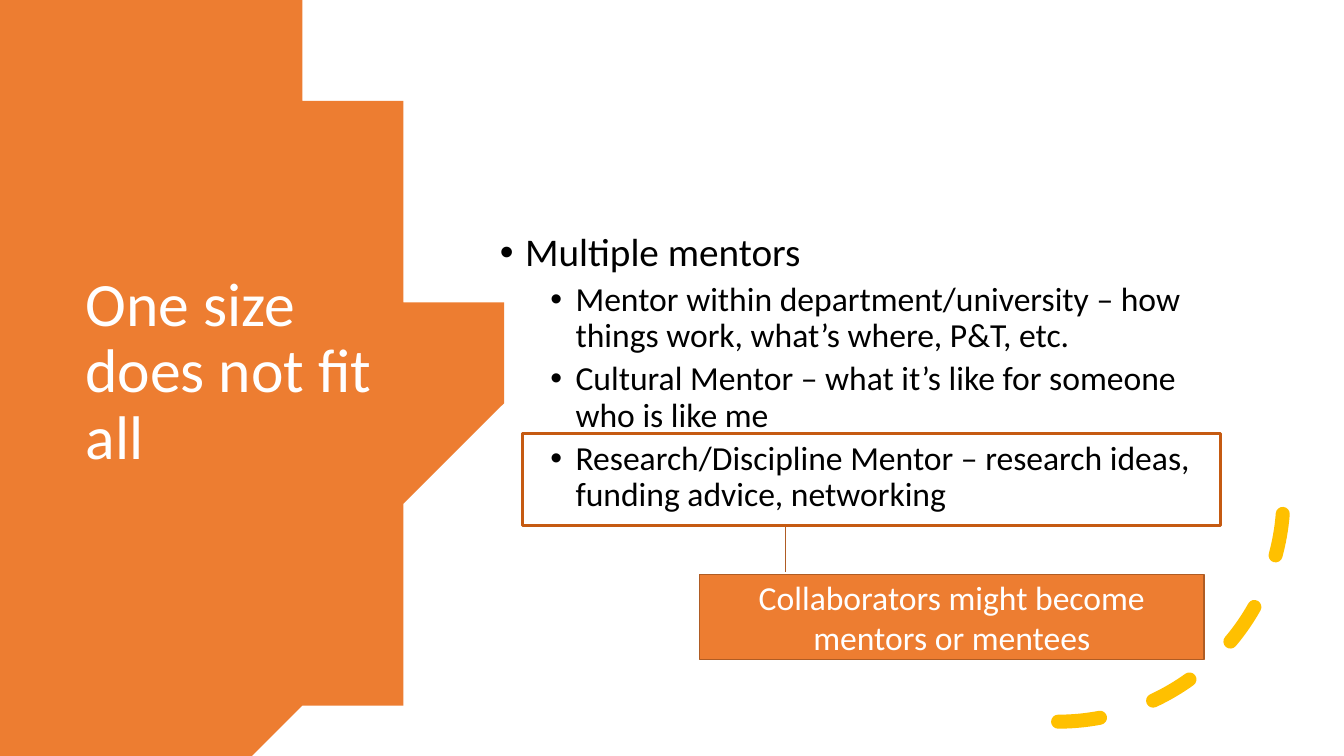
from math import asin, cos, sin

from lxml import etree
from pptx import Presentation
from pptx.dml.color import RGBColor
from pptx.enum.dml import MSO_LINE
from pptx.enum.shapes import MSO_SHAPE
from pptx.enum.text import MSO_ANCHOR, PP_ALIGN
from pptx.oxml.ns import qn
from pptx.util import Inches, Pt

ARC, RECTANGLE, CALLOUT = MSO_SHAPE.ARC, MSO_SHAPE.RECTANGLE, MSO_SHAPE.LINE_CALLOUT_1
DASH = MSO_LINE.DASH
MIDDLE = MSO_ANCHOR.MIDDLE
LEFT, CENTER = PP_ALIGN.LEFT, PP_ALIGN.CENTER

ORANGE = RGBColor(0xED, 0x7D, 0x31)
DARK_ORANGE = RGBColor(0xC5, 0x5A, 0x11)
BROWN = RGBColor(0xAF, 0x5C, 0x24)
YELLOW = RGBColor(0xFF, 0xC0, 0x00)
WHITE = RGBColor(0xFF, 0xFF, 0xFF)
BLACK = RGBColor(0x00, 0x00, 0x00)

WIDTH, HEIGHT = 13.33, 7.5


def write(paragraph, text, size, color, align=LEFT, spacing=1.0, before=0, bullet_at=None):
    """Fill a paragraph; bullet_at is the bullet's left position in inches."""
    paragraph.alignment = align
    paragraph.line_spacing = spacing
    paragraph.space_before = Pt(before)
    run = paragraph.add_run()
    run.text = text
    run.font.name = "Calibri"
    run.font.size = Pt(size)
    run.font.color.rgb = color
    if bullet_at is not None:
        properties = paragraph._p.get_or_add_pPr()
        properties.set("marL", str(Inches(bullet_at + 0.25)))
        properties.set("indent", str(-Inches(0.25)))
        etree.SubElement(properties, qn("a:buFont")).set("typeface", "Arial")
        etree.SubElement(properties, qn("a:buChar")).set("char", "•")


def style(shape, fill=None, line=None, width=1):
    """Set fill and outline, and drop the shadow."""
    shape.shadow.inherit = False
    if fill is None:
        shape.fill.background()
    else:
        shape.fill.solid()
        shape.fill.fore_color.rgb = fill
    if line is None:
        shape.line.fill.background()
    else:
        shape.line.color.rgb = line
        shape.line.width = Pt(width)


prs = Presentation()
prs.slide_width, prs.slide_height = Inches(WIDTH), Inches(HEIGHT)
slide = prs.slides.add_slide(prs.slide_layouts[6])
shapes = slide.shapes

# Left panel: a circle cut off by the slide's edges
radius, center_x, center_y = 4.41, 0.15, HEIGHT / 2
half_angle = asin(center_y / radius)
STEPS = 90
angles = [half_angle * (2 * step / STEPS - 1) for step in range(STEPS + 1)]
rim = [(center_x + radius * cos(a), center_y + radius * sin(a)) for a in angles]
outline = shapes.build_freeform(0, 0, scale=Inches(1))
outline.add_line_segments(rim + [(0, HEIGHT)], close=True)
style(outline.convert_to_shape(), fill=ORANGE)

# Title
title = shapes.add_textbox(Inches(0.75), Inches(1.26), Inches(3.5), Inches(4.88)).text_frame
title.word_wrap = True
title.vertical_anchor = MIDDLE
write(title.paragraphs[0], "One size does not fit all", size=44, color=WHITE, spacing=0.9)

# Dashed arc in the lower right corner
dashed_arc = shapes.add_shape(ARC, Inches(8.26), Inches(2.69), Inches(4.47), Inches(4.47))
style(dashed_arc, line=YELLOW, width=10)
dashed_arc.line.dash_style = DASH
dashed_arc.line._get_or_add_ln().set("cap", "rnd")
dashed_arc._element.spPr.find(qn("a:xfrm")).set("flipV", "1")

# Kinds of mentors
mentor_kinds = [
    "Mentor within department/university – how things work, what’s where, P&T, etc.",
    "Cultural Mentor – what it’s like for someone who is like me",
    "Research/Discipline Mentor – research ideas, funding advice, networking",
]
mentors = shapes.add_textbox(Inches(4.86), Inches(0.65), Inches(7.55), Inches(6.11)).text_frame
mentors.word_wrap = True
mentors.vertical_anchor = MIDDLE
write(mentors.paragraphs[0], "Multiple mentors", size=28, color=BLACK,
      spacing=0.9, before=10, bullet_at=0)
for kind in mentor_kinds:
    entry = mentors.add_paragraph()
    entry.level = 1
    write(entry, kind, size=24, color=BLACK, spacing=0.9, before=5, bullet_at=0.5)

# Frame around the research mentor
research_frame = shapes.add_shape(RECTANGLE, Inches(5.18), Inches(4.3), Inches(6.93), Inches(0.91))
style(research_frame, line=DARK_ORANGE, width=2.25)

# Callout pointing up to the frame
collaborators = shapes.add_shape(CALLOUT, Inches(6.94), Inches(5.7), Inches(5), Inches(0.84))
style(collaborators, fill=ORANGE, line=BROWN)
for index, share in enumerate([-0.03, 0.17, -0.56, 0.17]):
    collaborators.adjustments[index] = share
collaborators.text_frame.word_wrap = True
collaborators.text_frame.vertical_anchor = MIDDLE
write(collaborators.text_frame.paragraphs[0], "Collaborators might become mentors or mentees",
      size=24, color=WHITE, align=CENTER)

prs.save("out.pptx")
